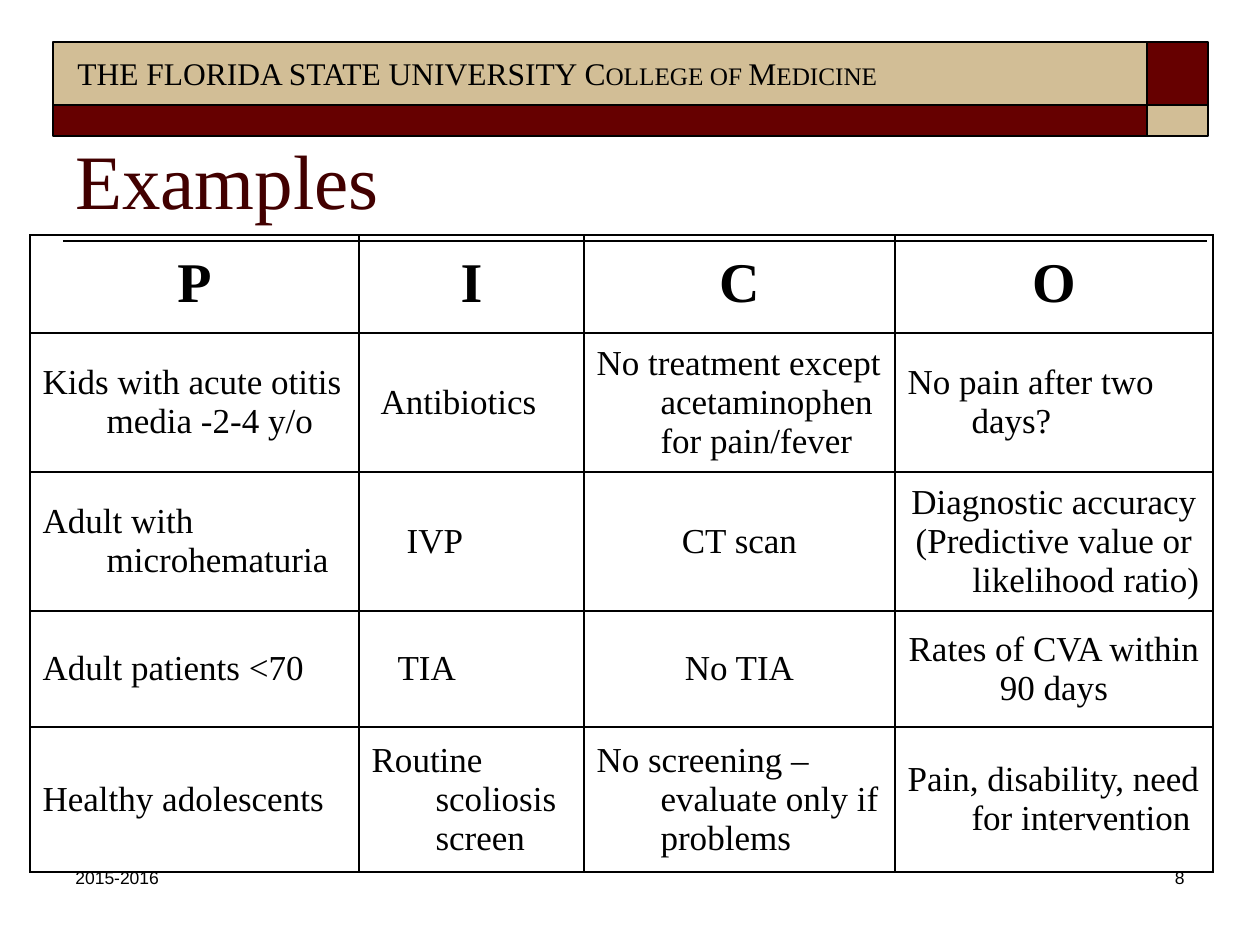
from lxml import etree
from pptx import Presentation, util as u
from pptx.dml.color import RGBColor
from pptx.enum import shapes, text
from pptx.oxml.ns import qn

PX = 914400 // 126
SERIF, SANS = "Times New Roman", "Arial"
BLACK, GARNET, GOLD, TITLE = "000000", "660000", "D2BE96", "420000"
LEFT, CENTER, RIGHT = text.PP_ALIGN.LEFT, text.PP_ALIGN.CENTER, text.PP_ALIGN.RIGHT

# Header band: left, top, width, height, fill
BAND = [
    (1146, 42, 62, 63, GARNET),
    (53, 42, 1094, 63, GOLD),
    (53, 105, 1094, 31, GARNET),
    (1147, 105, 61, 31, GOLD),
]

# Labels: words, box, font, size, colour, alignment, anchor
LABELS = [
    ("Examples", (63, 73, 1134, 158), SERIF, 44, TITLE, LEFT, text.MSO_ANCHOR.BOTTOM),
    ("2015-2016", (63, 861, 231, 63), SANS, 10, BLACK, LEFT, text.MSO_ANCHOR.TOP),
    ("8", (935, 861, 262, 63), SANS, 10, BLACK, RIGHT, text.MSO_ANCHOR.TOP),
]

# Table cells: words, alignment, left margin, first-line indent
HANG = (64, -64)
FLAT = (0, 0)
COLUMNS = [329, 225, 311, 318]
ROWS = [98, 139, 139, 116, 145]
PICO = [
    [(letter, CENTER, HANG) for letter in "PICO"],
    [("Kids with acute otitis media -2-4 y/o", LEFT, HANG),
     ("Antibiotics", LEFT, (9, 0)),
     ("No treatment except acetaminophen for pain/fever", LEFT, HANG),
     ("No pain after two days?", LEFT, HANG)],
    [("Adult with microhematuria", LEFT, HANG),
     ("IVP", LEFT, (35, 0)),
     ("CT scan", CENTER, HANG),
     ("Diagnostic accuracy\n(Predictive value or likelihood ratio)", CENTER, HANG)],
    [("Adult patients <70", LEFT, FLAT),
     ("TIA", LEFT, (26, 0)),
     ("No TIA", CENTER, HANG),
     ("Rates of CVA within 90 days", CENTER, FLAT)],
    [("Healthy adolescents", LEFT, FLAT),
     ("Routine scoliosis screen", LEFT, HANG),
     ("No screening – evaluate only if problems", LEFT, HANG),
     ("Pain, disability, need for intervention", LEFT, HANG)],
]


def emu(*lengths):
    return [length * PX for length in lengths]


def color(value):
    return RGBColor.from_string(value)


def set_font(paragraph, name, size, value, bold=False):
    font = paragraph.font
    font.name, font.size, font.bold = name, u.Pt(size), bold
    font.color.rgb = color(value)


def add_borders(cell):
    properties = cell._tc.get_or_add_tcPr()
    for position, side in enumerate(("lnL", "lnR", "lnT", "lnB")):
        line = etree.Element(qn("a:" + side), w=str(u.Pt(1)))
        fill = etree.SubElement(line, qn("a:solidFill"))
        etree.SubElement(fill, qn("a:srgbClr"), val=BLACK)
        properties.insert(position, line)


prs = Presentation()
prs.slide_width, prs.slide_height = emu(1260, 945)
slide = prs.slides.add_slide(prs.slide_layouts[6])

# Header band
for *box, fill in BAND:
    block = slide.shapes.add_shape(shapes.MSO_SHAPE.RECTANGLE, *emu(*box))
    block.shadow.inherit = False
    block.fill.solid()
    block.fill.fore_color.rgb = color(fill)
    block.line.color.rgb = color(BLACK)
    block.line.width = u.Pt(1)

# Rule under the title
rule = slide.shapes.add_connector(shapes.MSO_CONNECTOR.STRAIGHT, *emu(63, 241, 1207, 241))
rule.line.color.rgb = color(BLACK)
rule.line.width = u.Pt(1)
etree.SubElement(rule._element.spPr, qn("a:effectLst"))

# School name, second part in small capitals
school = slide.shapes.add_textbox(*emu(65, 48, 848, 50)).text_frame
school.word_wrap = False
name = school.paragraphs[0]
name.add_run().text = "THE FLORIDA STATE UNIVERSITY "
college = name.add_run()
college.text = "College of Medicine"
college.font._element.set("cap", "small")
set_font(name, SERIF, 18, BLACK)

# Title and footer
for words, box, face, size, value, align, anchor in LABELS:
    frame = slide.shapes.add_textbox(*emu(*box)).text_frame
    frame.word_wrap = True
    frame.vertical_anchor = anchor
    frame.text = words
    frame.paragraphs[0].alignment = align
    set_font(frame.paragraphs[0], face, size, value)

# PICO table
table = slide.shapes.add_table(
    len(ROWS), len(COLUMNS), *emu(30, 235, sum(COLUMNS), sum(ROWS))).table
table.first_row = table.horz_banding = False
for column, width in zip(table.columns, COLUMNS):
    column.width = width * PX
for row, height, entries in zip(table.rows, ROWS, PICO):
    row.height = height * PX
    heading = entries is PICO[0]
    for cell, (words, align, (margin, indent)) in zip(row.cells, entries):
        cell.fill.background()
        add_borders(cell)
        cell.vertical_anchor = text.MSO_ANCHOR.MIDDLE
        cell.text = words
        for paragraph in cell.text_frame.paragraphs:
            paragraph.alignment = align
            layout = paragraph._p.get_or_add_pPr()
            layout.set("marL", str(margin * PX))
            layout.set("indent", str(indent * PX))
            set_font(paragraph, SERIF, 32 if heading else 20, BLACK, heading)

prs.save("out.pptx")
